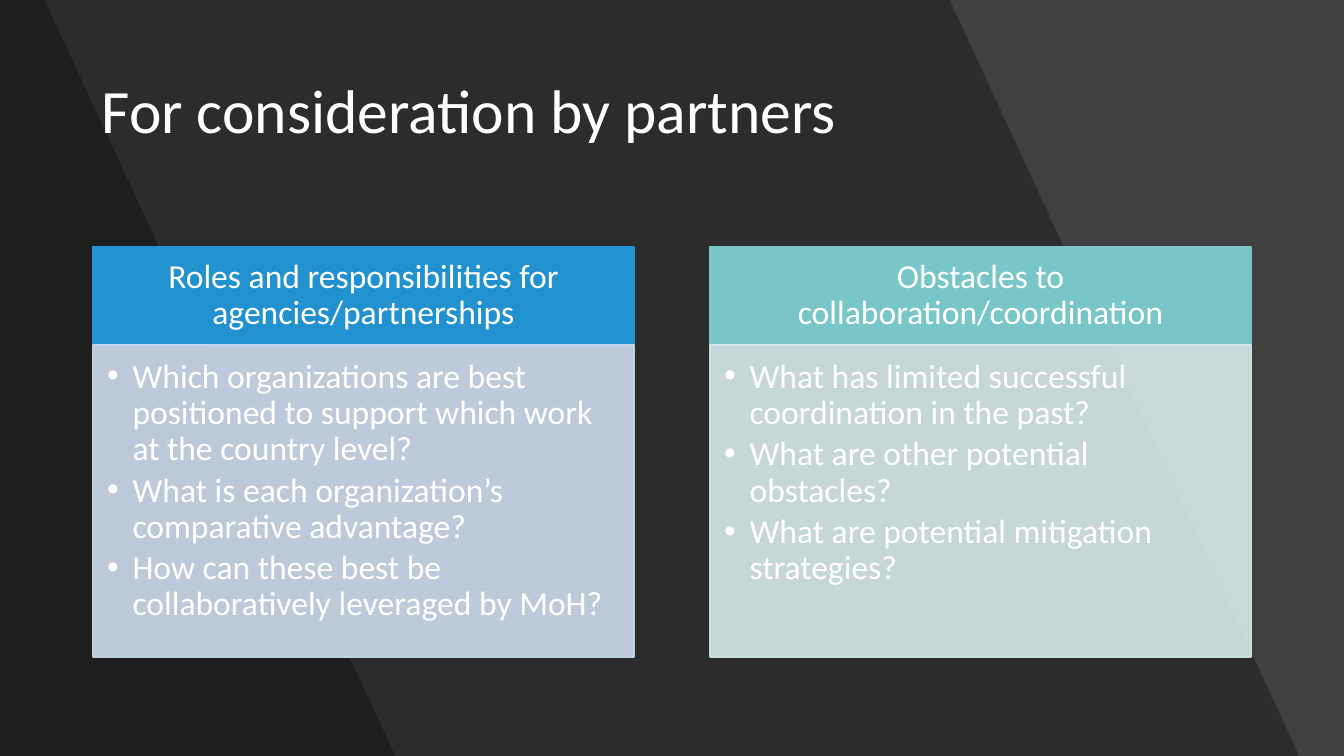
from dataclasses import dataclass

from lxml.etree import SubElement
from pptx import Presentation
from pptx.dml.color import RGBColor
from pptx.enum.text import MSO_ANCHOR, MSO_AUTO_SIZE, PP_ALIGN
from pptx.oxml.ns import qn
from pptx.util import Cm, Pt

COLORS = {
    "background": "404040",
    "shade": "000000",
    "text": "FFFFFF",
    "blue": "2291D0",
    "pale_blue": "CDDCEE",
    "teal": "78C6C8",
    "pale_teal": "D7EAEB",
}
FONT = "Calibri"
WIDTH, HEIGHT = 33.87, 19.05
PANEL_LEFT, PANEL_PITCH, PANEL_WIDTH = 2.34, 15.55, 13.64
HEAD_TOP, HEAD_HEIGHT, LIST_HEIGHT = 6.22, 2.47, 7.87


@dataclass
class Band:
    top_right: float
    bottom_right: float


@dataclass
class Panel:
    heading: str
    questions: list[str]
    head_color: str
    list_color: str


BANDS = [Band(23.93, 32.74), Band(1.12, 9.96)]
PANELS = [
    Panel(
        "Roles and responsibilities for agencies/partnerships",
        [
            "Which organizations are best positioned to support which work at the country level?",
            "What is each organization’s comparative advantage?",
            "How can these best be collaboratively leveraged by MoH?",
        ],
        "blue",
        "pale_blue",
    ),
    Panel(
        "Obstacles to collaboration/coordination",
        [
            "What has limited successful coordination in the past?",
            "What are other potential obstacles?",
            "What are potential mitigation strategies?",
        ],
        "teal",
        "pale_teal",
    ),
]


def rgb(name: str) -> RGBColor:
    return RGBColor.from_string(COLORS[name])


def set_alpha(sp, percent: int) -> None:
    for clr in sp._element.spPr.iter(qn("a:srgbClr")):
        SubElement(clr, qn("a:alpha")).set("val", str(percent * 1000))


def place(sp, left: float, top: float, width: float, height: float) -> None:
    sp.left, sp.top, sp.width, sp.height = Cm(left), Cm(top), Cm(width), Cm(height)


def paint(sp, color: str) -> None:
    sp.fill.solid()
    sp.fill.fore_color.rgb = rgb(color)
    sp.line.color.rgb = rgb(color)
    sp.line.width = Pt(1)


def write(sp, text: str, size: int, align: PP_ALIGN, anchor: MSO_ANCHOR,
          insets: tuple[float, float, float, float], after: float = 0) -> None:
    tf = sp.text_frame
    tf.text = text
    tf.word_wrap = True
    tf.auto_size = MSO_AUTO_SIZE.NONE
    tf.vertical_anchor = anchor
    tf.margin_left, tf.margin_top, tf.margin_right, tf.margin_bottom = map(Cm, insets)
    for p in tf.paragraphs:
        p.alignment = align
        p.line_spacing = 0.9
        p.space_before, p.space_after = Pt(0), Pt(after)
        for r in p.runs:
            r.font.name, r.font.size, r.font.bold = FONT, Pt(size), False
            r.font.color.rgb = rgb("text")


def add_bullets(sp) -> None:
    for p in sp.text_frame.paragraphs:
        pPr = p._p.get_or_add_pPr()
        pPr.set("marL", str(Cm(0.64)))
        pPr.set("indent", str(-Cm(0.64)))
        SubElement(pPr, qn("a:buChar")).set("char", "•")


def draw_band(s, band: Band, depth: int) -> None:
    builder = s.shapes.build_freeform(0, 0)
    builder.add_line_segments([
        (Cm(band.top_right), 0),
        (Cm(band.bottom_right), Cm(HEIGHT)),
        (0, Cm(HEIGHT)),
    ])
    sp = builder.convert_to_shape()
    sp.shadow.inherit = False
    sp.fill.solid()
    sp.fill.fore_color.rgb = rgb("shade")
    sp.line.fill.background()
    set_alpha(sp, 30)
    s.shapes._spTree.insert(2 + depth, sp._element)


def draw_panel(head, body, panel: Panel, left: float) -> None:
    place(head, left, HEAD_TOP, PANEL_WIDTH, HEAD_HEIGHT)
    paint(head, panel.head_color)
    write(head, panel.heading, 24, PP_ALIGN.CENTER, MSO_ANCHOR.MIDDLE,
          (0.48, 0.28, 0.48, 0.28))
    place(body, left, HEAD_TOP + HEAD_HEIGHT, PANEL_WIDTH, LIST_HEIGHT)
    paint(body, panel.list_color)
    set_alpha(body, 90)
    write(body, "\n".join(panel.questions), 24, PP_ALIGN.LEFT, MSO_ANCHOR.TOP,
          (0.36, 0.36, 0.48, 0.53), 3.6)
    add_bullets(body)


def main() -> None:
    prs = Presentation()
    prs.slide_width, prs.slide_height = Cm(WIDTH), Cm(HEIGHT)
    s = prs.slides.add_slide(prs.slide_layouts.get_by_name("Comparison"))
    s.background.fill.solid()
    s.background.fill.fore_color.rgb = rgb("background")
    for depth, band in enumerate(BANDS):
        draw_band(s, band, depth)
    title, *boxes = s.placeholders
    place(title, 2.31, 1.02, 29.24, 3.68)
    write(title, "For consideration by partners", 44, PP_ALIGN.LEFT,
          MSO_ANCHOR.MIDDLE, (0.25, 0.13, 0.25, 0.13))
    for i, panel in enumerate(PANELS):
        head, body = boxes[2 * i:2 * i + 2]
        draw_panel(head, body, panel, PANEL_LEFT + i * PANEL_PITCH)
    prs.save("out.pptx")


if __name__ == "__main__":
    main()
